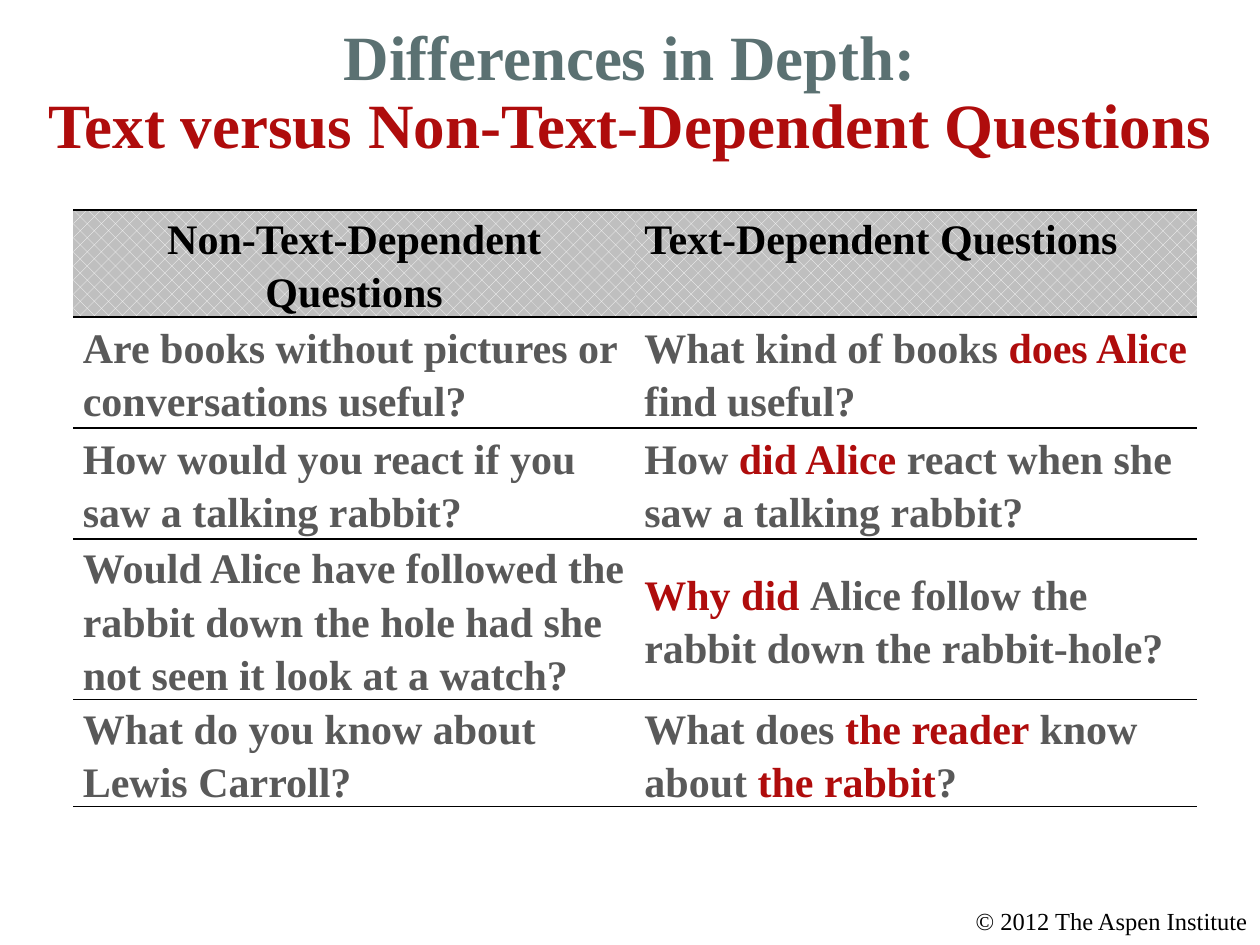
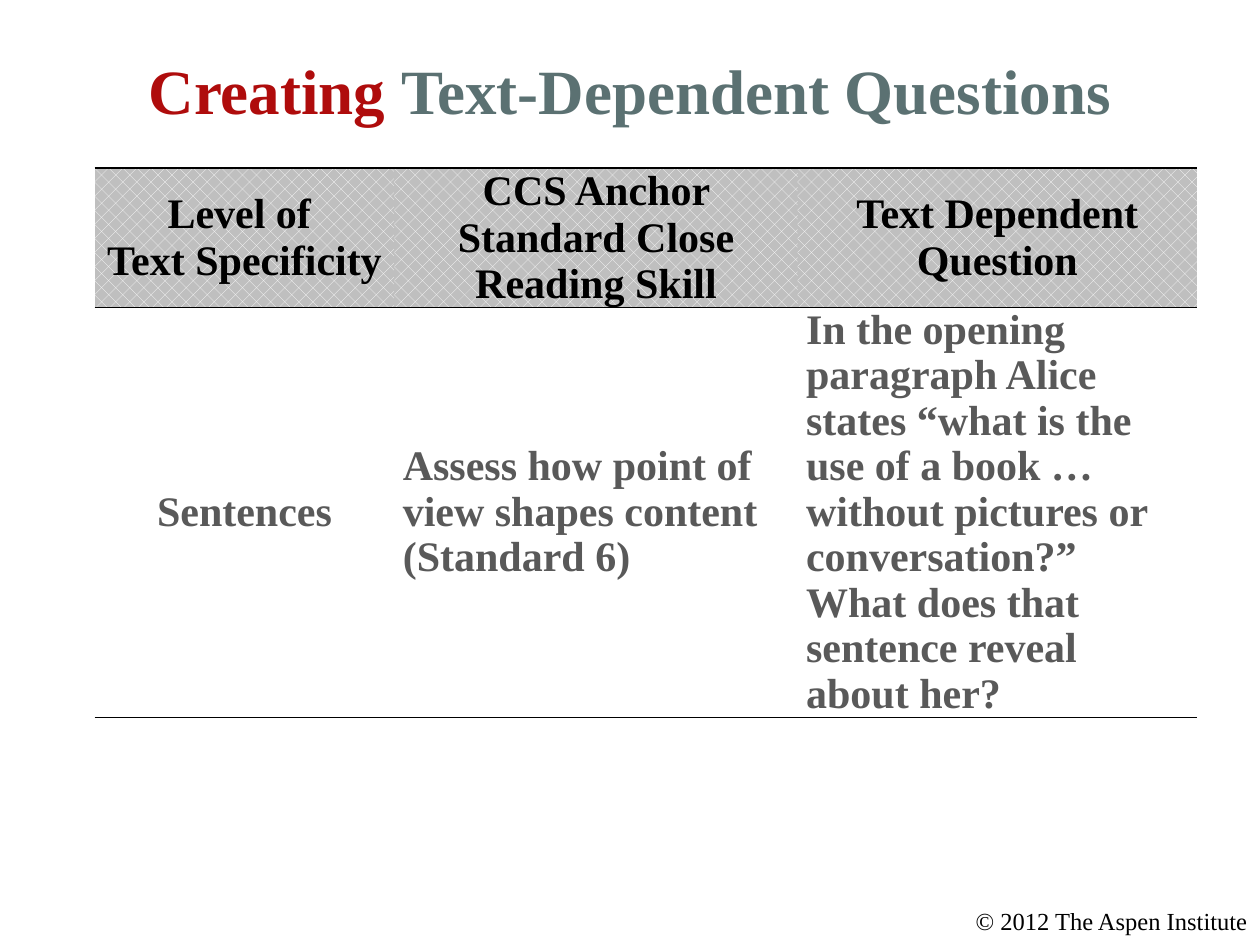
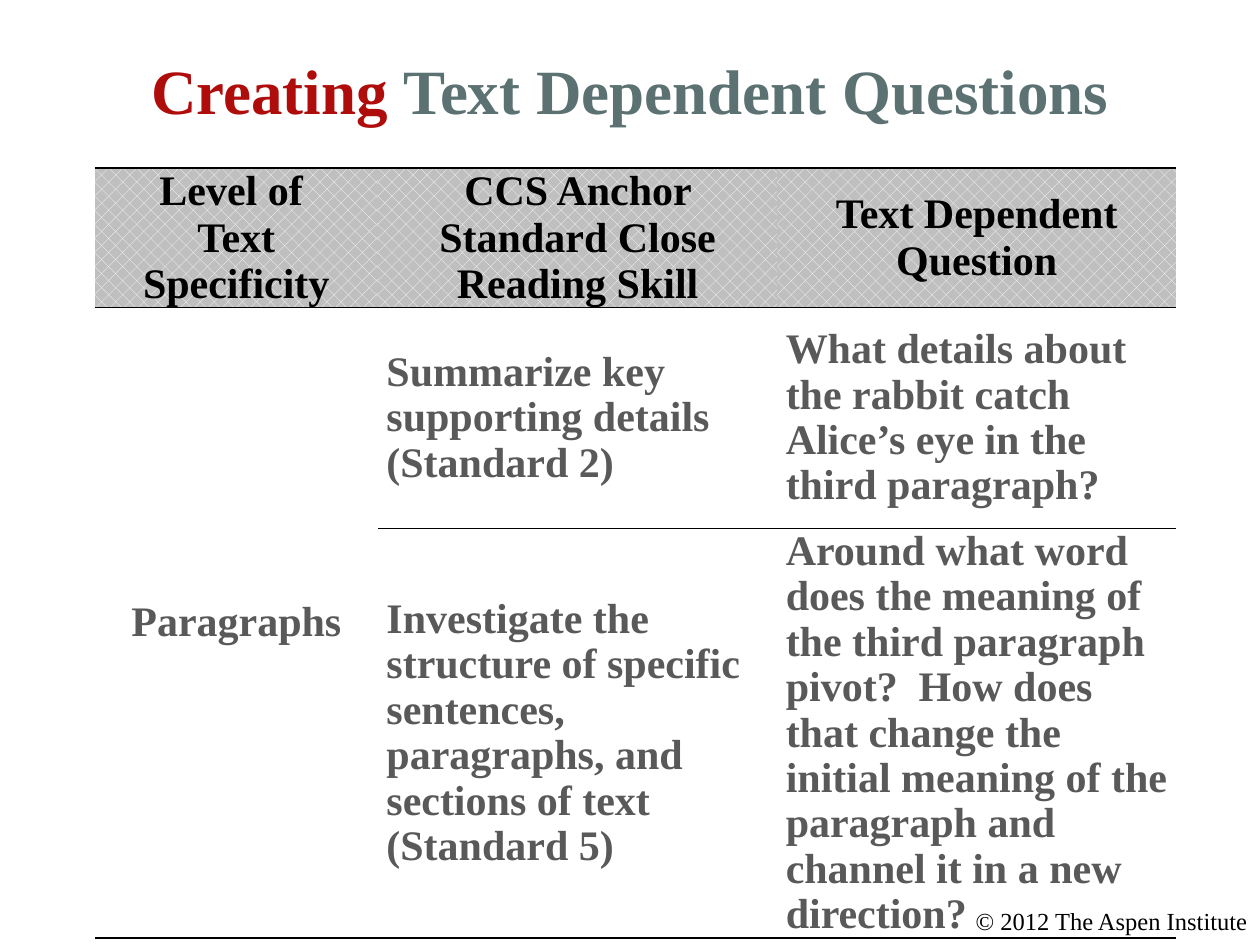
from lxml import etree
from pptx import Presentation
from pptx.dml.color import RGBColor
from pptx.enum.dml import MSO_PATTERN
from pptx.enum.text import MSO_ANCHOR, PP_ALIGN
from pptx.oxml.ns import qn
from pptx.util import Cm, Pt

LEFT, CENTER, RIGHT = PP_ALIGN.LEFT, PP_ALIGN.CENTER, PP_ALIGN.RIGHT
TOP, MIDDLE = MSO_ANCHOR.TOP, MSO_ANCHOR.MIDDLE
PERCENT_25 = MSO_PATTERN.PERCENT_25

THEME = {
    "font": "Times New Roman",
    "teal": RGBColor.from_string("5B7172"),
    "red": RGBColor.from_string("AF0C0C"),
    "gray": RGBColor.from_string("595959"),
    "black": RGBColor.from_string("000000"),
    "header_fore": RGBColor.from_string("FFFFFF"),
    "header_back": RGBColor.from_string("BFBFBF"),
    "title_size": Pt(36),
    "table_size": Pt(24),
    "footer_size": Pt(14),
    "tight_lines": Pt(26),
    "single_lines": Pt(26.55),
    "open_lines": Pt(30.55),
    "rule_width": Pt(1),
}
FOOTER = "© 2012 The Aspen Institute"

# Each | in a line switches between the base colour and red
LEVEL_HEADER = ["Level of \nText Specificity",
                "CCS Anchor Standard Close Reading Skill",
                "Text Dependent Question"]
LEVEL_FORMAT = {
    "left": 1.91, "top": 3.39, "margin": 0.17, "header_anchor": MIDDLE,
    "header_spacing": THEME["single_lines"], "body_spacing": THEME["tight_lines"],
    "header_align": [CENTER] * 3, "body_align": [CENTER, LEFT, LEFT],
}
SLIDES = [
    {
        "title": "Differences in Depth:\n|Text versus Non-Text-Dependent Questions",
        "left": 1.48, "top": 4.23, "margin": 0.19, "header_anchor": TOP,
        "header_spacing": THEME["open_lines"], "body_spacing": THEME["open_lines"],
        "header_align": [CENTER, LEFT], "body_align": [LEFT, LEFT],
        "columns": [11.32, 11.33],
        "rows": [2.15, 2.24, 2.24, 3.22, 2.15],
        "cells": [
            ["Non-Text-Dependent Questions", "Text-Dependent Questions"],
            ["Are books without pictures or conversations useful?",
             "What kind of books |does Alice |find useful?"],
            ["How would you react if you\nsaw a talking rabbit?",
             "How |did Alice |react when she saw a talking rabbit?"],
            ["Would Alice have followed the rabbit down the hole had she "
             "not seen it look at a watch?",
             "|Why did |Alice follow the rabbit down the rabbit-hole?"],
            ["What do you know about\nLewis Carroll?",
             "What does |the reader |know about |the rabbit|?"],
        ],
    },
    {
        **LEVEL_FORMAT,
        "title": "|Creating |Text-Dependent Questions",
        "columns": [6.04, 8.13, 8.05],
        "rows": [2.8, 8.26],
        "cells": [
            LEVEL_HEADER,
            ["Sentences",
             "Assess how point of view shapes content (Standard 6)",
             "In the opening paragraph Alice states “what is the use of a book … "
             "without pictures or conversation?”  What does that sentence reveal "
             "about her?"],
        ],
    },
    {
        **LEVEL_FORMAT,
        "title": "|Creating |Text Dependent Questions",
        "columns": [5.71, 8.05, 8.04],
        "rows": [2.8, 4.45, 8.26],
        "merge": ((1, 0), (2, 0)),
        "cells": [
            LEVEL_HEADER,
            ["Paragraphs",
             "Summarize key supporting details (Standard 2)",
             "What details about the rabbit catch Alice’s eye in the third "
             "paragraph?"],
            ["",
             "Investigate the structure of specific sentences, paragraphs, and "
             "sections of text (Standard 5)",
             "Around what word does the meaning of the third paragraph pivot?  "
             "How does that change the initial meaning of the paragraph and "
             "channel it in a new direction?"],
        ],
    },
]


def write_text(text_frame, text, color, font_format, paragraph_format):
    """Fill a text frame, one paragraph a line, with red parts between bars."""
    for index, line in enumerate(text.split("\n")):
        paragraph = text_frame.add_paragraph() if index else text_frame.paragraphs[0]
        for name, value in paragraph_format.items():
            setattr(paragraph, name, value)
        for part_index, part in enumerate(line.split("|")):
            if not part:
                continue
            run = paragraph.add_run()
            run.text = part
            for name, value in font_format.items():
                setattr(run.font, name, value)
            run.font.color.rgb = THEME["red"] if part_index % 2 else color


def set_borders(cell):
    """Draw rules above and below a cell, and none at its sides."""
    properties = cell._tc.get_or_add_tcPr()
    for side in ("lnL", "lnR", "lnT", "lnB"):
        line = etree.SubElement(properties, qn(f"a:{side}"), w=str(THEME["rule_width"]))
        if side in ("lnL", "lnR"):
            etree.SubElement(line, qn("a:noFill"))
        else:
            fill = etree.SubElement(line, qn("a:solidFill"))
            etree.SubElement(fill, qn("a:srgbClr"), val=str(THEME["black"]))


presentation = Presentation()
presentation.slide_width, presentation.slide_height = Cm(25.4), Cm(19.05)
title_font = {"name": THEME["font"], "size": THEME["title_size"], "bold": True}
table_font = {"name": THEME["font"], "size": THEME["table_size"], "bold": True}
footer_font = {"name": THEME["font"], "size": THEME["footer_size"]}

for content in SLIDES:
    slide = presentation.slides.add_slide(presentation.slide_layouts[6])

    # Title
    title = slide.shapes.add_textbox(0, 0, Cm(25.4), Cm(3.81)).text_frame
    title.word_wrap, title.vertical_anchor = True, MIDDLE
    write_text(title, content["title"], THEME["teal"], title_font,
               {"alignment": CENTER, "line_spacing": 0.9})

    # Table grid
    columns, rows = content["columns"], content["rows"]
    table = slide.shapes.add_table(
        len(rows), len(columns), Cm(content["left"]), Cm(content["top"]),
        Cm(sum(columns)), Cm(sum(rows))).table
    table.first_row = table.horz_banding = False
    for column, width in zip(table.columns, columns):
        column.width = Cm(width)
    for row, height in zip(table.rows, rows):
        row.height = Cm(height)

    # Table cells
    for row_index, texts in enumerate(content["cells"]):
        part = "body" if row_index else "header"
        for column_index, text in enumerate(texts):
            cell = table.cell(row_index, column_index)
            cell.margin_left = cell.margin_right = Cm(content["margin"])
            cell.margin_top = cell.margin_bottom = 0
            cell.vertical_anchor = MIDDLE if row_index else content["header_anchor"]
            set_borders(cell)
            if row_index:
                cell.fill.background()
            else:
                cell.fill.patterned()
                cell.fill.pattern = PERCENT_25
                cell.fill.fore_color.rgb = THEME["header_fore"]
                cell.fill.back_color.rgb = THEME["header_back"]
            write_text(cell.text_frame, text,
                       THEME["gray"] if row_index else THEME["black"], table_font,
                       {"alignment": content[f"{part}_align"][column_index],
                        "line_spacing": content[f"{part}_spacing"]})
    if "merge" in content:
        first, last = content["merge"]
        table.cell(*first).merge(table.cell(*last))

    # Footer
    footer = slide.shapes.add_textbox(Cm(15.06), Cm(18.21), Cm(10.34), Cm(0.71)).text_frame
    footer.word_wrap, footer.vertical_anchor = True, MIDDLE
    write_text(footer, FOOTER, THEME["black"], footer_font, {"alignment": RIGHT})

presentation.save("out.pptx")
